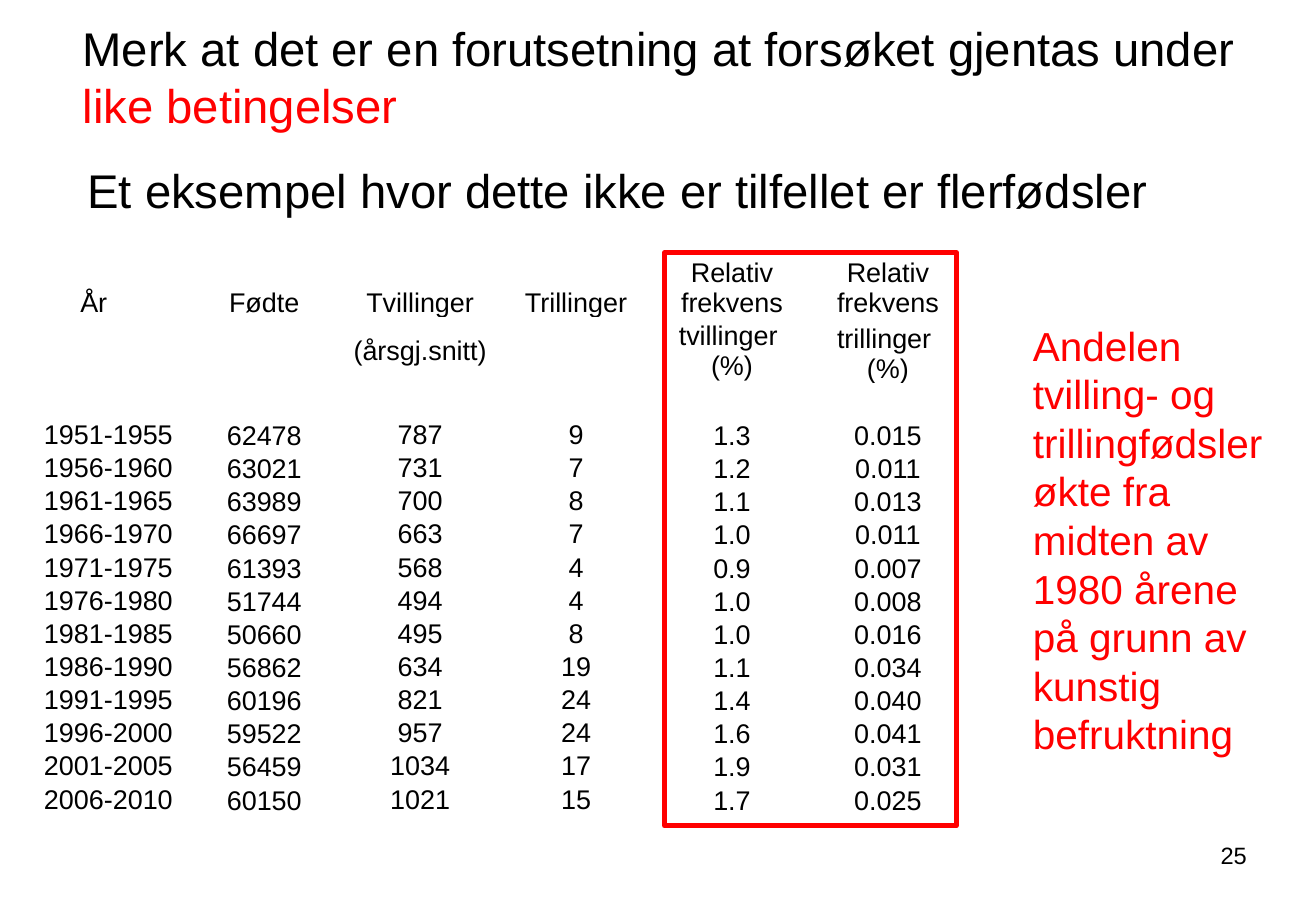
"""Build the slide on multiple births under changing conditions."""
from dataclasses import dataclass

from lxml.etree import SubElement
from pptx import Presentation
from pptx.dml.color import RGBColor
from pptx.enum.shapes import MSO_SHAPE
from pptx.enum.text import MSO_ANCHOR, MSO_AUTO_SIZE, PP_ALIGN
from pptx.oxml.ns import qn
from pptx.shapes.autoshape import Shape
from pptx.slide import Slide
from pptx.table import _Cell
from pptx.text.text import _Paragraph
from pptx.util import Inches, Pt


@dataclass(frozen=True)
class Theme:
    font: str = "Arial"
    ink: RGBColor = RGBColor(0, 0, 0)
    red: RGBColor = RGBColor(255, 0, 0)
    head: int = 28
    note: int = 24
    cell: int = 16
    page: int = 14
    frame: int = 3


@dataclass(frozen=True)
class Box:
    left: float
    top: float
    width: float
    height: float

    def place(self) -> tuple:
        return tuple(map(Inches, (self.left, self.top, self.width, self.height)))


@dataclass(frozen=True)
class Span:
    text: str
    size: int
    color: RGBColor


@dataclass(frozen=True)
class Block:
    box: Box
    spans: tuple[Span, ...]


LOOK = Theme()
BLOCKS = (
    Block(Box(0.58, 0, 9.79, 1.25), (
        Span("Merk at det er en forutsetning at forsøket gjentas under ", LOOK.head, LOOK.ink),
        Span("like betingelser", LOOK.head, LOOK.red))),
    Block(Box(0.62, 1.13, 9.85, 0.86), (
        Span("Et eksempel hvor dette ikke er tilfellet er flerfødsler", LOOK.head, LOOK.ink),)),
    Block(Box(8.4, 2.39, 2.31, 4.1), (
        Span("Andelen tvilling- og trillingfødsler økte fra midten av 1980 årene "
             "på grunn av kunstig befruktning", LOOK.note, LOOK.red),)),
)
PAGE = Block(Box(7.82, 6.87, 2.54, 0.52), (Span("25", LOOK.page, LOOK.ink),))
GRID = Box(0.25, 2.08, 7.7, 4.63)
FRAME = Box(5.47, 2.08, 2.4, 4.72)
TALL = 0.54
HEADS = (
    ("År", "Fødte", "Tvillinger", "Trillinger", "Relativ frekvens", "Relativ frekvens"),
    ("", "", "(årsgj.snitt)", "", "tvillinger \n(%)", "trillinger \n(%)"),
    ("",) * 6,
)
BIRTHS = (
    ("1951-1955", "62478", "787", "9", "1.3", "0.015"),
    ("1956-1960", "63021", "731", "7", "1.2", "0.011"),
    ("1961-1965", "63989", "700", "8", "1.1", "0.013"),
    ("1966-1970", "66697", "663", "7", "1.0", "0.011"),
    ("1971-1975", "61393", "568", "4", "0.9", "0.007"),
    ("1976-1980", "51744", "494", "4", "1.0", "0.008"),
    ("1981-1985", "50660", "495", "8", "1.0", "0.016"),
    ("1986-1990", "56862", "634", "19", "1.1", "0.034"),
    ("1991-1995", "60196", "821", "24", "1.4", "0.040"),
    ("1996-2000", "59522", "957", "24", "1.6", "0.041"),
    ("2001-2005", "56459", "1034", "17", "1.9", "0.031"),
    ("2006-2010", "60150", "1021", "15", "1.7", "0.025"),
)


def add_span(para: _Paragraph, span: Span) -> None:
    run = para.add_run()
    run.text = span.text
    run.font.name = LOOK.font
    run.font.size = Pt(span.size)
    run.font.color.rgb = span.color


def fill_block(shape: Shape, block: Block, align: PP_ALIGN, anchor: MSO_ANCHOR) -> None:
    shape.left, shape.top, shape.width, shape.height = block.box.place()
    frame = shape.text_frame
    frame.word_wrap = True
    frame.auto_size = MSO_AUTO_SIZE.NONE
    frame.vertical_anchor = anchor
    para = frame.paragraphs[0]
    para.alignment = align
    para.space_before = Pt(0)
    for span in block.spans:
        add_span(para, span)


def drop_bullet(para: _Paragraph) -> None:
    props = para._p.get_or_add_pPr()
    props.set("marL", "0")
    props.set("indent", "0")
    SubElement(props, qn("a:buNone"))


def fill_cell(cell: _Cell, text: str, anchor: MSO_ANCHOR) -> None:
    cell.fill.background()
    cell.margin_left = cell.margin_right = cell.margin_top = Inches(0.01)
    cell.margin_bottom = 0
    cell.vertical_anchor = anchor
    frame = cell.text_frame
    for rank, line in enumerate(text.split("\n")):
        para = frame.add_paragraph() if rank else frame.paragraphs[0]
        para.alignment = PP_ALIGN.CENTER
        if line:
            add_span(para, Span(line, LOOK.cell, LOOK.ink))
        else:
            SubElement(para._p, qn("a:endParaRPr"), sz=str(LOOK.cell * 100))


def add_grid(slide: Slide) -> None:
    rows = HEADS + BIRTHS
    table = slide.shapes.add_table(len(rows), len(rows[0]), *GRID.place()).table
    table.first_row = table.horz_banding = False
    low = (GRID.height - 2 * TALL) / (len(rows) - 2)
    for col in table.columns:
        col.width = Inches(GRID.width / len(rows[0]))
    for r, row in enumerate(rows):
        table.rows[r].height = Inches(TALL if r < 2 else low)
        for c, text in enumerate(row):
            middle = r > 0 and c in (0, 2, 3) or (r, c) == (1, 4)
            fill_cell(table.cell(r, c), text, MSO_ANCHOR.MIDDLE if middle else MSO_ANCHOR.BOTTOM)
    table.cell(0, 0).margin_right = Inches(0.25)


def add_frame(slide: Slide) -> None:
    shape = slide.shapes.add_shape(MSO_SHAPE.RECTANGLE, *FRAME.place())
    shape.shadow.inherit = False
    shape.fill.background()
    shape.line.color.rgb = LOOK.red
    shape.line.width = Pt(LOOK.frame)


def main() -> None:
    deck = Presentation()
    deck.slide_width, deck.slide_height = Inches(10.83), Inches(7.5)
    slide = deck.slides.add_slide(deck.slide_layouts[3])
    for rank, (shape, block) in enumerate(zip(slide.placeholders, BLOCKS)):
        fill_block(shape, block, PP_ALIGN.LEFT, MSO_ANCHOR.MIDDLE)
        if rank:
            drop_bullet(shape.text_frame.paragraphs[0])
    add_grid(slide)
    add_frame(slide)
    page = slide.shapes.add_textbox(*PAGE.box.place())
    fill_block(page, PAGE, PP_ALIGN.RIGHT, MSO_ANCHOR.TOP)
    deck.save("out.pptx")


if __name__ == "__main__":
    main()
